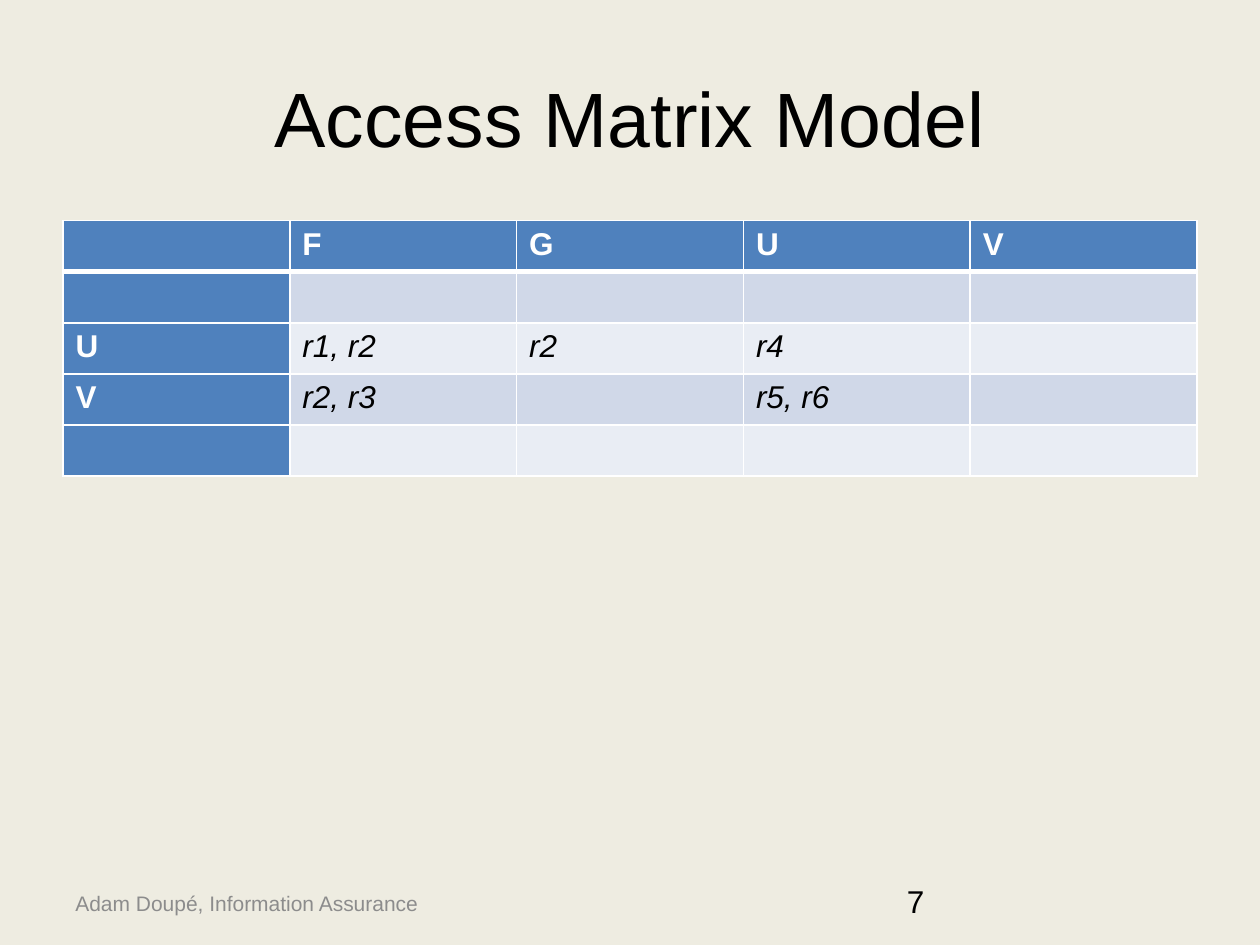
from lxml import etree
from pptx import Presentation, util as u
from pptx.dml.color import RGBColor
from pptx.enum import text
from pptx.oxml.ns import qn

WIDTH, HEIGHT = u.Inches(10), u.Inches(7.5)
MARGIN = 0.05  # share of the slide width
FONT = "Arial"
COLORS = {
    "background": "EEECE1", "ink": "000000", "footer": "8C8C8C",
    "header": "4F81BD", "white": "FFFFFF",
    "odd_band": "D0D8E8", "even_band": "E9EDF4",
}
ACCESS_MATRIX = [
    ["", "F", "G", "U", "V"],
    ["", "", "", "", ""],
    ["U", "r1, r2", "r2", "r4", ""],
    ["V", "r2, r3", "", "r5, r6", ""],
    ["", "", "", "", ""],
]


def color(name):
    return RGBColor.from_string(COLORS[name])


def style(paragraph, size, ink, bold=False, italic=False):
    font = paragraph.font
    font.name, font.size = FONT, u.Pt(size)
    font.bold, font.italic = bold, italic
    font.color.rgb = color(ink)
    for run in paragraph.runs:
        run.font.name, run.font.size = FONT, u.Pt(size)
        run.font.bold, run.font.italic = bold, italic
        run.font.color.rgb = color(ink)


def place(left, top, width, height):
    """Turn shares of the slide's size into lengths."""
    return (int(left * WIDTH), int(top * HEIGHT),
            int(width * WIDTH), int(height * HEIGHT))


def add_label(slide, words, box, size, ink="ink", align=text.PP_ALIGN.LEFT,
              anchor=text.MSO_ANCHOR.MIDDLE):
    frame = slide.shapes.add_textbox(*place(*box)).text_frame
    frame.word_wrap = True
    frame.vertical_anchor = anchor
    frame.text = words
    frame.paragraphs[0].alignment = align
    style(frame.paragraphs[0], size, ink)


def set_borders(cell, top=1, bottom=1):
    properties = cell._tc.get_or_add_tcPr()
    sides = {"lnL": 1, "lnR": 1, "lnT": top, "lnB": bottom}
    for position, (side, points) in enumerate(sides.items()):
        line = etree.Element(qn(f"a:{side}"), w=str(u.Pt(points)))
        fill = etree.SubElement(line, qn("a:solidFill"))
        etree.SubElement(fill, qn("a:srgbClr"), val=COLORS["white"])
        properties.insert(position, line)


def add_matrix(slide, rights, box):
    rows, columns = len(rights), len(rights[0])
    matrix = slide.shapes.add_table(rows, columns, *place(*box)).table
    for row, entries in enumerate(rights):
        for column, entry in enumerate(entries):
            cell = matrix.cell(row, column)
            heading = row == 0 or column == 0
            band = "odd_band" if row % 2 else "even_band"
            cell.fill.solid()
            cell.fill.fore_color.rgb = color("header" if heading else band)
            set_borders(cell, top=3 if row == 1 else 1,
                        bottom=3 if row == 0 else 1)
            cell.text = entry
            style(cell.text_frame.paragraphs[0], 18,
                  "white" if heading else "ink",
                  bold=heading, italic=not heading)


def main():
    deck = Presentation()
    deck.slide_width, deck.slide_height = WIDTH, HEIGHT
    slide = deck.slides.add_slide(deck.slide_layouts[6])
    slide.background.fill.solid()
    slide.background.fill.fore_color.rgb = color("background")

    # Footer
    add_label(slide, "Adam Doupé, Information Assurance",
              (MARGIN, 6.97 / 7.5, 0.43, 0.4 / 7.5), 12, "footer")
    # Title
    add_label(slide, "Access Matrix Model",
              (MARGIN, 0.04, 1 - 2 * MARGIN, 1.25 / 7.5), 44,
              align=text.PP_ALIGN.CENTER)
    # Subjects in rows, objects in columns
    add_matrix(slide, ACCESS_MATRIX,
               (MARGIN, 1.75 / 7.5, 1 - 2 * MARGIN, 2.03 / 7.5))
    # Slide number
    add_label(slide, "7", (0.71, 6.95 / 7.5, 0.23, 0.4 / 7.5), 18,
              anchor=text.MSO_ANCHOR.TOP)

    deck.save("out.pptx")


if __name__ == "__main__":
    main()
